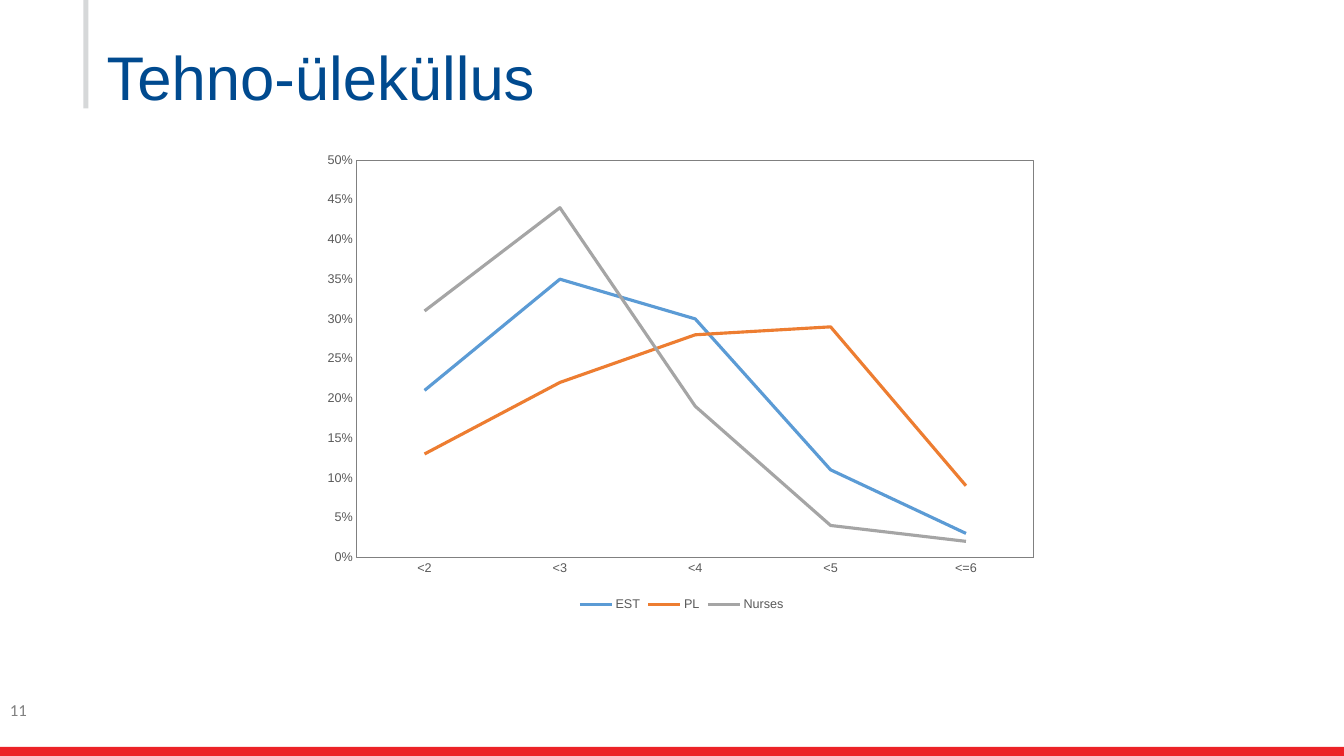
import pptx
import pptx.chart.data
import pptx.dml.color
import pptx.enum.chart
import pptx.enum.shapes
import pptx.oxml
import pptx.oxml.ns
import pptx.util

Cm = pptx.util.Cm
Pt = pptx.util.Pt
RGB = pptx.dml.color.RGBColor
qn = pptx.oxml.ns.qn

RED = RGB(0xEC, 0x22, 0x27)
SILVER = RGB(0xD6, 0xD8, 0xD9)
NAVY = RGB(0x00, 0x4A, 0x8F)
GRAY = RGB(0x80, 0x80, 0x80)
DARK = RGB(0x59, 0x59, 0x59)
BLUE = RGB(0x5B, 0x9B, 0xD5)
ORANGE = RGB(0xED, 0x7D, 0x31)
ASH = RGB(0xA5, 0xA5, 0xA5)

WIDTH, HEIGHT = 33.87, 19.05
GROUPS = ["<2", "<3", "<4", "<5", "<=6"]
SERIES = [
    ("EST", BLUE, [0.21, 0.35, 0.30, 0.11, 0.03]),
    ("PL", ORANGE, [0.13, 0.22, 0.28, 0.29, 0.09]),
    ("Nurses", ASH, [0.31, 0.44, 0.19, 0.04, 0.02]),
]


class Page:
    face = "Arial"
    small = 9

    def __init__(self, deck):
        self.slide = deck.slides.add_slide(deck.slide_layouts[6])

    def font(self, font, size, color, face=None):
        font.size = Pt(size)
        font.name = face or self.face
        font.color.rgb = color

    def bar(self, box, color):
        kind = pptx.enum.shapes.MSO_SHAPE.RECTANGLE
        bar = self.slide.shapes.add_shape(kind, *map(Cm, box))
        bar.shadow.inherit = False
        bar.fill.solid()
        bar.fill.fore_color.rgb = color
        bar.line.fill.background()

    def text(self, box, words, size, color, face=None, space=1.0):
        frame = self.slide.shapes.add_textbox(*map(Cm, box)).text_frame
        frame.word_wrap = True
        para = frame.paragraphs[0]
        para.text = words
        para.line_spacing = space
        self.font(para.font, size, color, face)

    def chart(self, box, groups, series, plot):
        data = pptx.chart.data.CategoryChartData(number_format="0%")
        data.categories = groups
        for name, color, values in series:
            data.add_series(name, values)
        kind = pptx.enum.chart.XL_CHART_TYPE.LINE
        chart = self.slide.shapes.add_chart(kind, *map(Cm, box), data).chart
        chart.has_title = False
        self.font(chart.font, self.small, DARK)
        chart.plots[0].vary_by_categories = False
        for line, (name, color, values) in zip(chart.plots[0].series, series):
            line.smooth = False
            line.marker.style = pptx.enum.chart.XL_MARKER_STYLE.NONE
            line.format.line.color.rgb = color
            line.format.line.width = Pt(2.25)
        self.axes(chart)
        chart.has_legend = True
        chart.legend.position = pptx.enum.chart.XL_LEGEND_POSITION.BOTTOM
        chart.legend.include_in_layout = False
        self.font(chart.legend.font, self.small, DARK)
        self.frame(chart, plot)

    def axes(self, chart):
        for axis in (chart.category_axis, chart.value_axis):
            axis.has_major_gridlines = False
            axis.major_tick_mark = pptx.enum.chart.XL_TICK_MARK.NONE
            axis.minor_tick_mark = pptx.enum.chart.XL_TICK_MARK.NONE
            self.font(axis.tick_labels.font, self.small, DARK)
        chart.category_axis.format.line.color.rgb = GRAY
        chart.category_axis.format.line.width = Pt(0.75)
        axis = chart.value_axis
        axis.format.line.fill.background()
        axis.minimum_scale, axis.maximum_scale = 0, 0.5
        axis.major_unit = 0.05
        axis.tick_labels.number_format = "0%"
        axis.tick_labels.number_format_is_linked = False

    def frame(self, chart, plot):
        """Place the inner plot area by chart fractions and outline it."""
        area = chart.element.find(".//" + qn("c:plotArea"))
        for old in area.findall(qn("c:layout")):
            area.remove(old)
        x, y, w, h = plot
        spaces = pptx.oxml.ns.nsdecls("c", "a")
        area.insert(0, pptx.oxml.parse_xml(
            f'<c:layout {spaces}><c:manualLayout><c:layoutTarget val="inner"/>'
            '<c:xMode val="edge"/><c:yMode val="edge"/>'
            f'<c:x val="{x}"/><c:y val="{y}"/><c:w val="{w}"/><c:h val="{h}"/>'
            '</c:manualLayout></c:layout>'))
        area.append(pptx.oxml.parse_xml(
            f'<c:spPr {spaces}><a:noFill/><a:ln w="9525"><a:solidFill>'
            f'<a:srgbClr val="{GRAY}"/></a:solidFill></a:ln></c:spPr>'))


def main():
    deck = pptx.Presentation()
    deck.slide_width, deck.slide_height = Cm(WIDTH), Cm(HEIGHT)
    page = Page(deck)
    page.bar((0, 18.82, WIDTH, HEIGHT - 18.82), RED)
    page.bar((2.1, 0, 0.13, 2.73), SILVER)
    page.text((2.44, 1.07, 29.2, 2.56), "Tehno-üleküllus", 44, NAVY, space=0.9)
    page.text((0, 17.5, 7.62, 1.02), "11", 12, GRAY, face="Calibri")
    page.chart((7.92, 3.63, 18.52, 11.89), GROUPS, SERIES,
               plot=(0.058, 0.034, 0.921, 0.842))
    deck.save("out.pptx")


if __name__ == "__main__":
    main()
